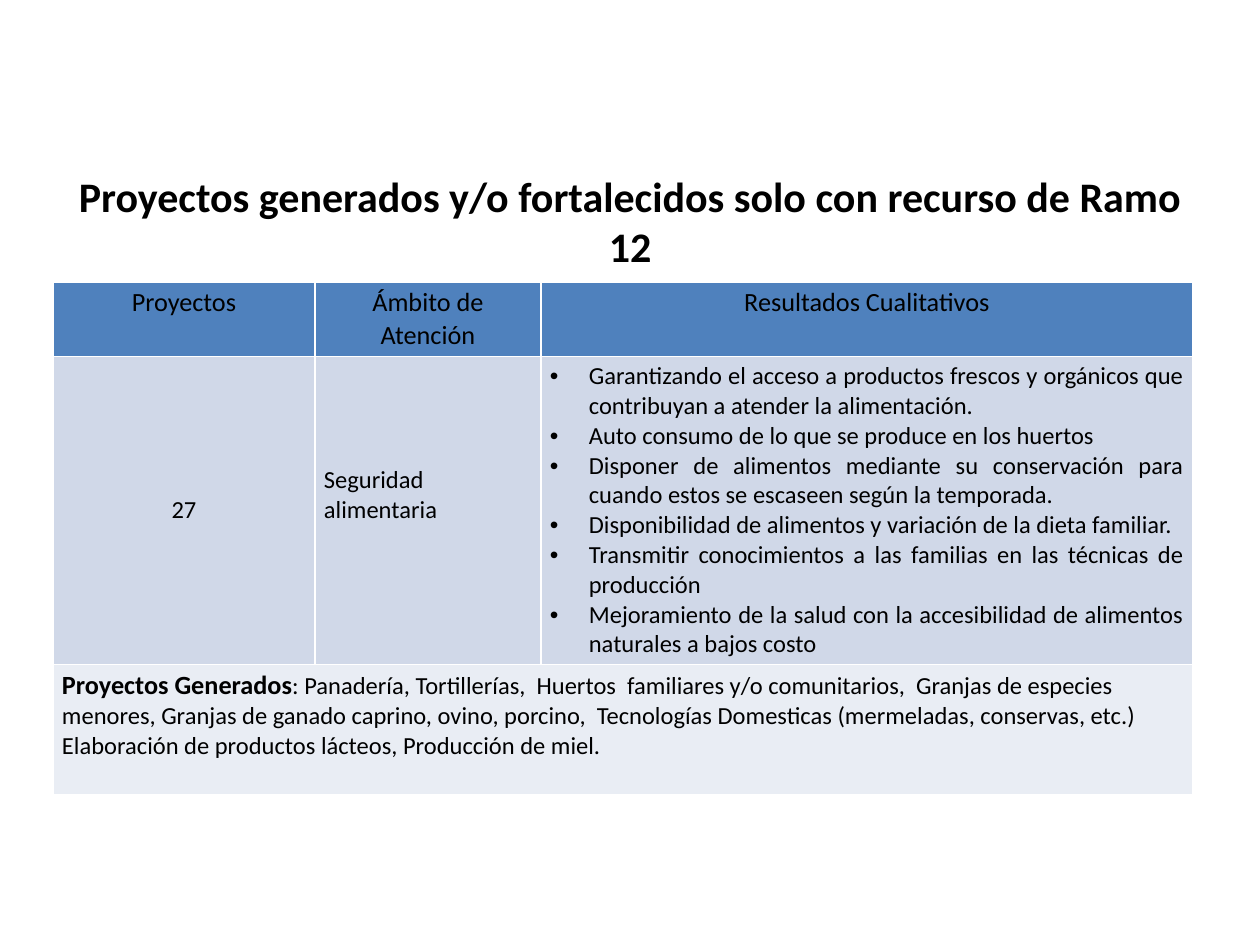
from lxml import etree
from pptx import Presentation
from pptx.dml.color import RGBColor
from pptx.enum.text import MSO_ANCHOR, MSO_AUTO_SIZE, PP_ALIGN
from pptx.oxml.ns import qn
from pptx.util import Pt

LEFT, CENTER, JUSTIFY = PP_ALIGN.LEFT, PP_ALIGN.CENTER, PP_ALIGN.JUSTIFY
TOP, MIDDLE = MSO_ANCHOR.TOP, MSO_ANCHOR.MIDDLE
GROW = MSO_AUTO_SIZE.SHAPE_TO_FIT_TEXT
SCALE = 914400 / 126
FONT = "Calibri"
COLORS = {
    "text": "000000",
    "head": "4F81BD",
    "body": "D0D8E8",
    "foot": "E9EDF4",
    "line": "FFFFFF",
}
TITLE = "Proyectos generados y/o fortalecidos solo con recurso de Ramo 12"
HEADS = ["Proyectos", "Ámbito de Atención", "Resultados Cualitativos"]
RESULTS = [
    "Garantizando el acceso a productos frescos y orgánicos que contribuyan a atender la alimentación.",
    "Auto consumo de lo que se produce en los huertos",
    "Disponer de alimentos mediante su conservación para cuando estos se escaseen según la temporada.",
    "Disponibilidad de alimentos y variación de la dieta familiar.",
    "Transmitir conocimientos a las familias en las técnicas de producción",
    "Mejoramiento de la salud con la accesibilidad de alimentos naturales a bajos costo",
]
LABEL = "Proyectos Generados"
DETAIL = (
    ": Panadería, Tortillerías,  Huertos  familiares y/o comunitarios,  "
    "Granjas de especies menores, Granjas de ganado caprino, ovino, porcino,  "
    "Tecnologías Domesticas (mermeladas, conservas, etc.) "
    "Elaboración de productos lácteos, Producción de miel."
)
COLS = [262, 226, 652]
ROWS = [74, 307, 130]
INDENT = 39


def px(n):
    return round(n * SCALE)


def color(name):
    return RGBColor.from_string(COLORS[name])


def write(para, text, size=14, bold=False, align=LEFT, bullet=False):
    para.alignment = align
    if bullet:
        props = para._p.get_or_add_pPr()
        props.set("marL", str(px(INDENT)))
        props.set("indent", str(-px(INDENT)))
        etree.SubElement(props, qn("a:buFont"), typeface="Arial")
        etree.SubElement(props, qn("a:buChar"), char="•")
    run = para.add_run()
    run.text = text
    font = run.font
    font.name, font.size, font.bold = FONT, Pt(size), bold
    font.color.rgb = color("text")


def border(cell):
    props = cell._tc.get_or_add_tcPr()
    for spot, side in enumerate(("lnL", "lnR", "lnT", "lnB")):
        line = etree.Element(qn("a:" + side), w=str(Pt(1)))
        fill = etree.SubElement(line, qn("a:solidFill"))
        etree.SubElement(fill, qn("a:srgbClr"), val=COLORS["line"])
        props.insert(spot, line)


def style(cell, fill, anchor=TOP):
    cell.fill.solid()
    cell.fill.fore_color.rgb = color(fill)
    cell.vertical_anchor = anchor
    cell.margin_left = cell.margin_right = px(9)
    cell.margin_top = cell.margin_bottom = px(5)
    border(cell)


def title(slide, x, y, w, h):
    box = slide.shapes.add_textbox(px(x), px(y), px(w), px(h))
    frame = box.text_frame
    frame.word_wrap = True
    frame.auto_size = GROW
    write(frame.paragraphs[0], TITLE, size=24, bold=True, align=CENTER)


def projects(slide, x, y, w, h):
    shape = slide.shapes.add_table(len(ROWS), len(COLS), px(x), px(y), px(w), px(h))
    table = shape.table
    for col, width in zip(table.columns, COLS):
        col.width = px(width)
    for row, height in zip(table.rows, ROWS):
        row.height = px(height)
    for i, (fill, anchor) in enumerate((("head", TOP), ("body", MIDDLE), ("foot", TOP))):
        for cell in table.rows[i].cells:
            style(cell, fill, anchor)
    table.cell(2, 0).merge(table.cell(2, 2))

    for i, head in enumerate(HEADS):
        write(table.cell(0, i).text_frame.paragraphs[0], head, size=15, align=CENTER)
    count, scope, results = table.rows[1].cells
    write(count.text_frame.paragraphs[0], "27", align=CENTER)
    scope.margin_bottom = px(35)
    write(scope.text_frame.paragraphs[0], "Seguridad alimentaria")
    frame = results.text_frame
    for i, text in enumerate(RESULTS):
        para = frame.add_paragraph() if i else frame.paragraphs[0]
        write(para, text, align=JUSTIFY, bullet=True)
    para = table.cell(2, 0).text_frame.paragraphs[0]
    write(para, LABEL, size=15, bold=True)
    write(para, DETAIL)


def main():
    deck = Presentation()
    deck.slide_width, deck.slide_height = px(1260), px(945)
    slide = deck.slides.add_slide(deck.slide_layouts[6])
    projects(slide, 53, 282, sum(COLS), sum(ROWS))
    title(slide, 48, 164, 1164, 63)
    deck.save("out.pptx")


if __name__ == "__main__":
    main()
